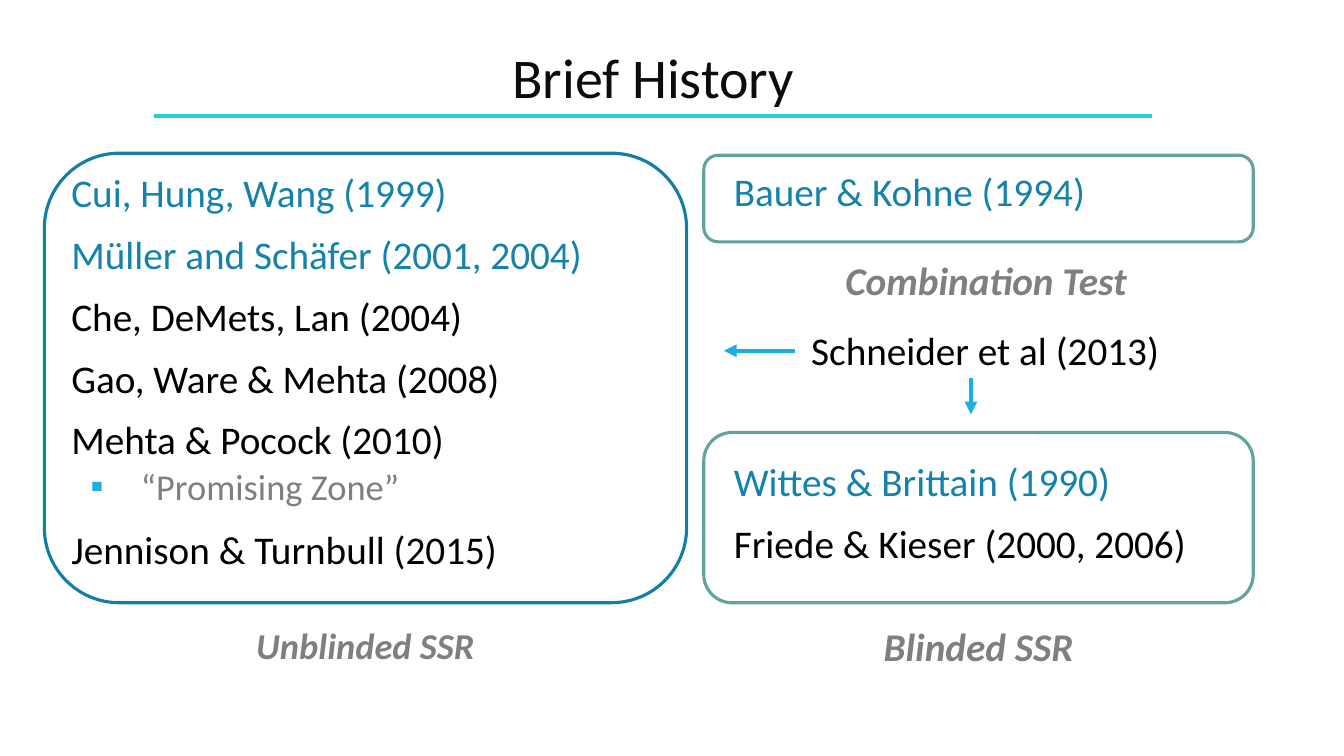
from lxml import etree
from pptx import Presentation
from pptx.dml.color import RGBColor
from pptx.enum.shapes import MSO_CONNECTOR, MSO_SHAPE
from pptx.enum.text import MSO_ANCHOR, PP_ALIGN
from pptx.oxml.ns import qn
from pptx.util import Inches, Pt

LEFT, CENTER = PP_ALIGN.LEFT, PP_ALIGN.CENTER
TOP, MIDDLE = MSO_ANCHOR.TOP, MSO_ANCHOR.MIDDLE
ROUND = MSO_SHAPE.ROUNDED_RECTANGLE
STRAIGHT = MSO_CONNECTOR.STRAIGHT

COLORS = {
    "title": "0C0C0C", "rule": "27CED7", "key": "1482AB", "text": "000000",
    "muted": "7F7F7F", "arrow": "1CADE4", "blue": "147EA6", "green": "62A39F",
}
BODY = {"size": Pt(28), "name": "Calibri"}
STYLES = {
    "title": BODY | {"size": Pt(40)},
    "key": BODY,
    "text": BODY,
    "sub": BODY | {"size": Pt(26)},
    "label": BODY | {"bold": True, "italic": True},
}
INKS = {"sub": "muted", "label": "muted"}


def color(name):
    return RGBColor.from_string(COLORS[name])


def add_bullet(para):
    props = para._p.get_or_add_pPr()
    props.set("marL", str(Inches(0.69)))
    props.set("indent", str(Inches(-0.5)))
    tint = etree.SubElement(props, qn("a:buClr"))
    etree.SubElement(tint, qn("a:srgbClr"), val=COLORS["arrow"])
    etree.SubElement(props, qn("a:buFont"), typeface="Calibri")
    etree.SubElement(props, qn("a:buChar"), char="▪")


def add_text(slide, box, rows, align=LEFT, anchor=TOP, lines=0.9):
    """Each row holds its text, its style and the space before it."""
    frame = slide.shapes.add_textbox(*map(Inches, box)).text_frame
    frame.word_wrap = True
    frame.vertical_anchor = anchor
    for i, (words, style, gap) in enumerate(rows):
        para = frame.paragraphs[0] if i == 0 else frame.add_paragraph()
        para.alignment = align
        para.line_spacing = lines
        para.space_before = Pt(gap)
        if style == "sub":
            add_bullet(para)
        run = para.add_run()
        run.text = words
        for key, value in STYLES[style].items():
            setattr(run.font, key, value)
        run.font.color.rgb = color(INKS.get(style, style))


def add_line(slide, start, end, ink, arrow=False):
    line = slide.shapes.add_connector(STRAIGHT, *map(Inches, start + end))
    line.line.color.rgb = color(ink)
    line.line.width = Pt(3)
    if arrow:
        etree.SubElement(line.line._get_or_add_ln(), qn("a:tailEnd"), type="triangle")
    etree.SubElement(line._element.spPr, qn("a:effectLst"))


def add_panel(slide, box, ink, rows, inset):
    """Rounded frame with its list set in by the given offsets."""
    x, y, w, h = box
    dx, dy = inset
    frame = slide.shapes.add_shape(ROUND, *map(Inches, box))
    frame.shadow.inherit = False
    frame.fill.background()
    frame.line.color.rgb = color(ink)
    frame.line.width = Pt(2.25)
    add_text(slide, (x + dx, y + dy, w - dx, h - dy), rows)


def add_label(slide, box, words, style="label"):
    add_text(slide, box, [(words, style, 0)], CENTER, lines=1)


def add_header(slide, box):
    x, y, w, h = box
    add_text(slide, box, [("Brief History", "title", 0)], CENTER, MIDDLE, 0.8)
    add_line(slide, (x, y + 0.95), (x + w, y + 0.95), "rule")


def add_unblinded(slide, box):
    x, y, w, h = box
    rows = [
        ("Cui, Hung, Wang (1999)", "key", 0),
        ("Müller and Schäfer (2001, 2004)", "key", 14),
        ("Che, DeMets, Lan (2004)", "text", 14),
        ("Gao, Ware & Mehta (2008)", "text", 14),
        ("Mehta & Pocock (2010)", "text", 14),
        ("“Promising Zone”", "sub", 4),
        ("Jennison & Turnbull (2015)", "text", 16),
    ]
    add_panel(slide, box, "blue", rows, (0.17, 0.15))
    STYLES["small"] = STYLES["label"] | {"size": Pt(26)}
    INKS["small"] = "muted"
    add_label(slide, (x, y + h + 0.15, w, 0.57), "Unblinded SSR", "small")


def add_combined(slide, box):
    x, y, w, h = box
    add_panel(slide, box, "green", [("Bauer & Kohne (1994)", "key", 0)], (0.2, 0.12))
    add_label(slide, (x + 0.91, y + h + 0.09, 3.78, 0.57), "Combination Test")


def add_bridge(slide, box):
    """Paper that points to both kinds of re-estimation."""
    x, y, w, h = box
    add_label(slide, box, "Schneider et al (2013)", "text")
    add_line(slide, (x + 0.39, y + 0.29), (x - 0.32, y + 0.29), "arrow", True)
    add_line(slide, (x + 2.13, y + 0.56), (x + 2.13, y + 0.92), "arrow", True)


def add_blinded(slide, box):
    x, y, w, h = box
    rows = [
        ("Wittes & Brittain (1990)", "key", 0),
        ("Friede & Kieser (2000, 2006)", "text", 14),
    ]
    add_panel(slide, box, "green", rows, (0.2, 0.25))
    add_label(slide, (x, y + h + 0.14, w, 0.57), "Blinded SSR")


def main():
    deck = Presentation()
    deck.slide_width, deck.slide_height = Inches(13.33), Inches(7.5)
    slide = deck.slides.add_slide(deck.slide_layouts[6])
    add_header(slide, (1.53, 0.2, 9.9, 1.23))
    add_unblinded(slide, (0.44, 1.52, 6.37, 4.46))
    add_combined(slide, (6.98, 1.54, 5.45, 0.86))
    add_bridge(slide, (7.5, 3.19, 4.54, 0.57))
    add_blinded(slide, (6.98, 4.29, 5.45, 1.69))
    deck.save("out.pptx")


if __name__ == "__main__":
    main()
